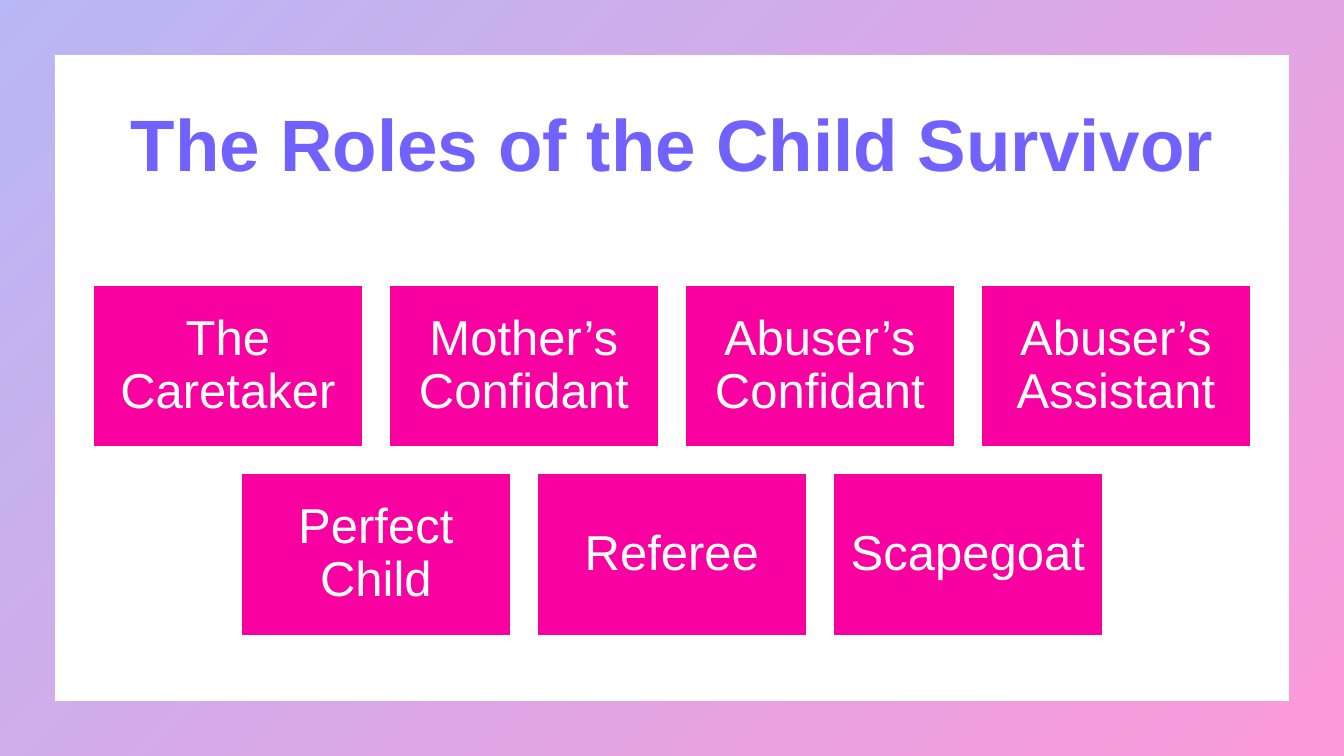
from lxml.etree import SubElement
from pptx import Presentation
from pptx.dml.color import RGBColor
from pptx.enum.shapes import MSO_SHAPE
from pptx.enum.text import MSO_ANCHOR, PP_ALIGN
from pptx.oxml.ns import qn
from pptx.util import Cm, Pt

COLORS = {
    "blue": "4D4EE6",
    "pink": "F900A0",
    "violet": "7162FE",
    "white": "FFFFFF",
}
FONT = "Arial"
SLIDE_WIDTH, SLIDE_HEIGHT = 33.87, 19.05

# Role cards, in cm
ROLE_ROWS = [
    ["The Caretaker", "Mother’s Confidant", "Abuser’s Confidant", "Abuser’s Assistant"],
    ["Perfect Child", "Referee", "Scapegoat"],
]
CARD_WIDTH, CARD_HEIGHT = 6.78, 4.07
CARD_GAP = 0.68
FIRST_ROW_TOP = 7.19


def color(name):
    return RGBColor.from_string(COLORS[name])


def write_text(shape, text, size, color_name, bold=False):
    """Centre one paragraph of text in a shape."""
    text_frame = shape.text_frame
    text_frame.text = text
    text_frame.word_wrap = True
    text_frame.vertical_anchor = MSO_ANCHOR.MIDDLE
    paragraph = text_frame.paragraphs[0]
    paragraph.alignment = PP_ALIGN.CENTER
    paragraph.line_spacing = 0.9
    font = paragraph.runs[0].font
    font.name = FONT
    font.size = Pt(size)
    font.bold = bold
    font.color.rgb = color(color_name)


def add_gradient_frame(slide):
    shape = slide.shapes.add_shape(
        MSO_SHAPE.FRAME, 0, 0, Cm(SLIDE_WIDTH), Cm(SLIDE_HEIGHT))
    shape.adjustments[0] = 0.072
    shape.shadow.inherit = False
    shape.line.fill.background()
    shape.fill.gradient()
    shape.fill.gradient_angle = 315
    for stop, name in zip(shape.fill.gradient_stops, ("blue", "pink")):
        stop.color.rgb = color(name)
    # Both stops are 40 % opaque
    for stop_color in shape.element.spPr.iter(qn("a:srgbClr")):
        SubElement(stop_color, qn("a:alpha"), val="40000")


def add_title(slide, text):
    title = slide.shapes.add_textbox(Cm(2.34), Cm(1.88), Cm(29.21), Cm(3.68))
    write_text(title, text, 52, "violet", bold=True)


def add_card(slide, text, left, top):
    card = slide.shapes.add_shape(
        MSO_SHAPE.RECTANGLE, Cm(left), Cm(top), Cm(CARD_WIDTH), Cm(CARD_HEIGHT))
    card.shadow.inherit = False
    card.fill.solid()
    card.fill.fore_color.rgb = color("pink")
    card.line.color.rgb = color("white")
    card.line.width = Pt(1)
    text_frame = card.text_frame
    text_frame.margin_left = text_frame.margin_right = Cm(0.37)
    text_frame.margin_top = text_frame.margin_bottom = Cm(0.37)
    write_text(card, text, 35, "white")


def add_card_row(slide, roles, top):
    """Lay out one row of cards, centred on the slide."""
    pitch = CARD_WIDTH + CARD_GAP
    row_left = (SLIDE_WIDTH - len(roles) * pitch + CARD_GAP) / 2
    for column, role in enumerate(roles):
        add_card(slide, role, row_left + column * pitch, top)


def main():
    presentation = Presentation()
    presentation.slide_width = Cm(SLIDE_WIDTH)
    presentation.slide_height = Cm(SLIDE_HEIGHT)
    slide = presentation.slides.add_slide(presentation.slide_layouts[6])

    # Border and heading
    add_gradient_frame(slide)
    add_title(slide, "The Roles of the Child Survivor")

    # Roles
    for row, roles in enumerate(ROLE_ROWS):
        add_card_row(slide, roles, FIRST_ROW_TOP + row * (CARD_HEIGHT + CARD_GAP))

    presentation.save("out.pptx")


if __name__ == "__main__":
    main()
